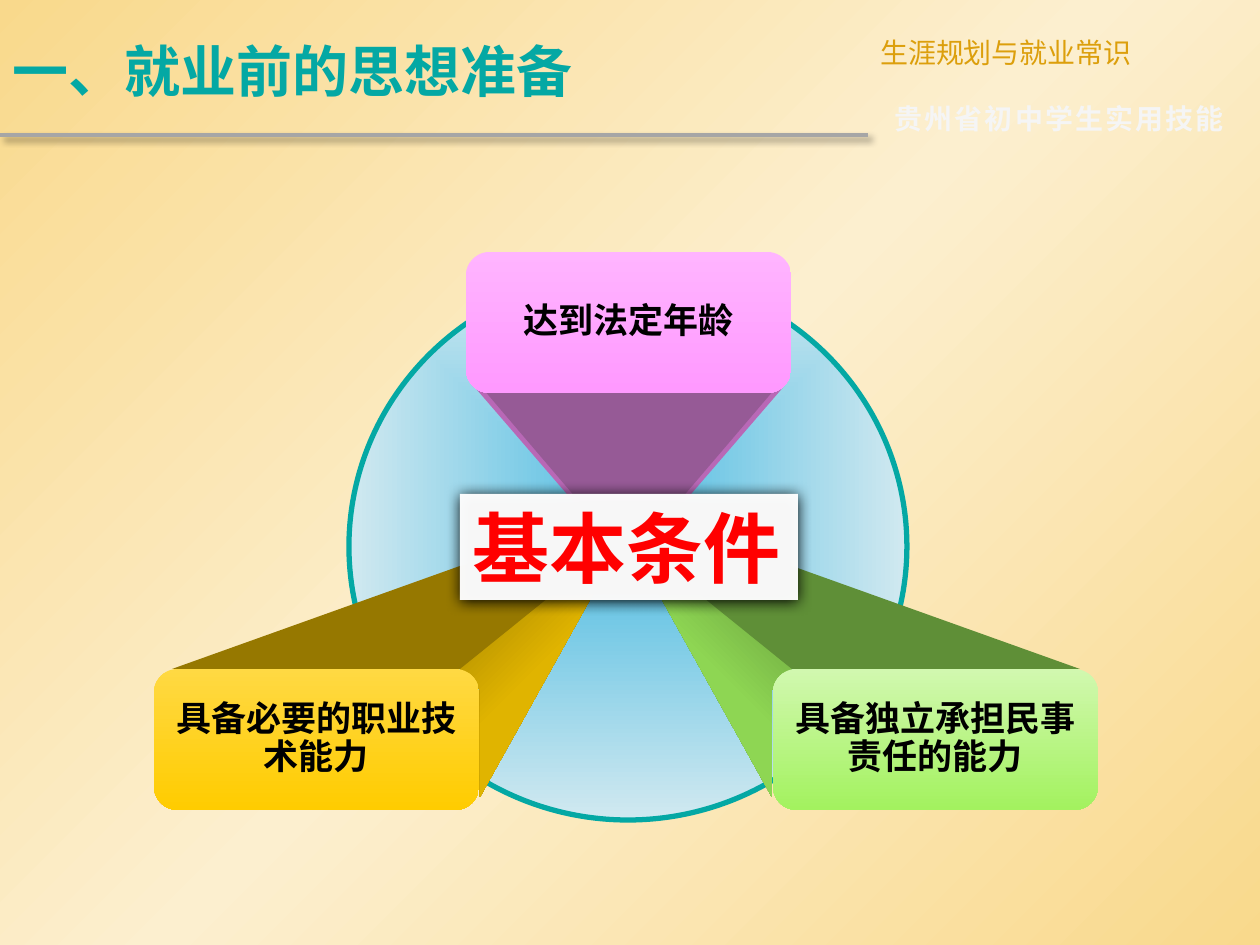
from lxml import etree
from pptx import Presentation
from pptx.dml.color import RGBColor
from pptx.enum.shapes import MSO_CONNECTOR, MSO_SHAPE
from pptx.enum.text import MSO_ANCHOR, MSO_AUTO_SIZE, PP_ALIGN
from pptx.oxml.ns import qn
from pptx.util import Pt

PX = 914400 // 126
FONT = "Noto Sans CJK SC"
TEAL = RGBColor(0x04, 0xA8, 0xA4)
AMBER = RGBColor(0xDC, 0x9F, 0x0C)
GREY = RGBColor(0xA6, 0xA6, 0xA6)
PALE = RGBColor(0xF5, 0xF5, 0xF5)
WHITE = RGBColor(0xFF, 0xFF, 0xFF)
BLACK = RGBColor(0, 0, 0)
RED = RGBColor(0xFF, 0, 0)
SAND = RGBColor(0xF9, 0xD9, 0x8C)
CREAM = RGBColor(0xFC, 0xEF, 0xCF)
SKY = RGBColor(0x52, 0xBD, 0xE2)
ICE = RGBColor(0xD1, 0xE9, 0xF0)
PINK = RGBColor(0xFF, 0xB4, 0xFF), RGBColor(0xFF, 0x99, 0xFF)
GOLD = RGBColor(0xFF, 0xD9, 0x43), RGBColor(0xFF, 0xCC, 0x00)
GREEN = RGBColor(0xD1, 0xF8, 0xAF), RGBColor(0xA3, 0xF2, 0x5F)
PLUM = RGBColor(0x96, 0x5A, 0x96)
ORCHID = RGBColor(0xB8, 0x68, 0xB6)
GOLD_SIDE = RGBColor(0x96, 0x78, 0x00), RGBColor(0xE0, 0xB4, 0x00)
GREEN_SIDE = RGBColor(0x5F, 0x8F, 0x37), RGBColor(0x8E, 0xD6, 0x53)

HEADINGS = [
    ("生涯规划与就业常识", (868, 29, 392, 47), 16, AMBER, False, PP_ALIGN.JUSTIFY, 0),
    ("一、就业前的思想准备", (0, 6, 868, 129), 32, TEAL, True, PP_ALIGN.LEFT, 0),
    ("贵州省初中学生实用技能", (882, 95, 372, 47), 16, PALE, True, PP_ALIGN.LEFT, 130),
]
CONDITIONS = [
    ("具备独立承担民事责任的能力", 773, 669, GREEN),
    ("具备必要的职业技术能力", 154, 669, GOLD),
    ("达到法定年龄", 466, 252, PINK),
]
BOX_W, BOX_H = 325, 141
AXIS = 626
TOP_FACE = [(172, 669), (460, 566), (626, 535), (460, 669)]
SIDE_FACE = [(460, 669), (626, 535), (480, 797), (480, 690)]
PINK_EDGE = [(472, 384), (786, 384), (629, 566)]
PINK_FACE = [(484, 390), (774, 390), (629, 560)]


def px(values):
    return [round(v * PX) for v in values]


def gradient(fill, root, stops, angle=None):
    fill.gradient()
    grad = root.find(".//" + qn("a:gradFill"))
    for child in list(grad):
        grad.remove(child)
    lst = etree.SubElement(grad, qn("a:gsLst"))
    for i, color in enumerate(stops):
        gs = etree.SubElement(lst, qn("a:gs"), pos=str(i * 100000 // (len(stops) - 1)))
        etree.SubElement(gs, qn("a:srgbClr"), val=str(color))
    if angle is None:
        way = etree.SubElement(grad, qn("a:path"), path="shape")
        etree.SubElement(way, qn("a:fillToRect"), l="50000", t="50000", r="50000", b="50000")
    else:
        etree.SubElement(grad, qn("a:lin"), ang=str(angle * 60000), scaled="0")


def add_shadow(sp, alpha, blur, dist, angle):
    effects = etree.SubElement(sp._element.spPr, qn("a:effectLst"))
    outer = etree.SubElement(effects, qn("a:outerShdw"), blurRad=str(Pt(blur)),
                             dist=str(Pt(dist)), dir=str(angle * 60000),
                             algn="ctr", rotWithShape="0")
    color = etree.SubElement(outer, qn("a:srgbClr"), val=str(BLACK))
    etree.SubElement(color, qn("a:alpha"), val=str(alpha * 1000))


def set_text(sp, text, size, color, bold, align, spacing=0):
    tf = sp.text_frame
    tf.text = text
    tf.word_wrap = True
    tf.vertical_anchor = MSO_ANCHOR.MIDDLE
    p = tf.paragraphs[0]
    p.alignment = align
    f = p.runs[0].font
    f.name, f.size, f.bold, f.color.rgb = FONT, Pt(size), bold, color
    rPr = p.runs[0]._r.get_or_add_rPr()
    etree.SubElement(rPr, qn("a:ea"), typeface=FONT)
    if spacing:
        rPr.set("spc", str(spacing))
    return tf


def add_face(s, points, colors, angle=0):
    pts = [px(pt) for pt in points]
    builder = s.shapes.build_freeform(*pts[0], scale=1.0)
    builder.add_line_segments(pts[1:], close=True)
    sp = builder.convert_to_shape()
    sp.shadow.inherit = False
    sp.line.fill.background()
    gradient(sp.fill, sp._element, colors, angle)


def mirror(points):
    return [(2 * AXIS - x, y) for x, y in points]


def add_condition(s, text, x, y, colors):
    sp = s.shapes.add_shape(MSO_SHAPE.ROUNDED_RECTANGLE, *px((x, y, BOX_W, BOX_H)))
    sp.adjustments[0] = 0.167
    sp.shadow.inherit = False
    sp.line.fill.background()
    gradient(sp.fill, sp._element, colors, 90)
    tf = set_text(sp, text, 20, BLACK, True, PP_ALIGN.CENTER)
    tf.margin_left = tf.margin_right = 15 * PX
    tf.margin_top = tf.margin_bottom = 8 * PX
    tf.paragraphs[0].line_spacing = 0.9


def main():
    """Build the slide on the basic conditions for employment."""
    prs = Presentation()
    prs.slide_width, prs.slide_height = px((1260, 945))
    s = prs.slides.add_slide(prs.slide_layouts[6])
    gradient(s.background.fill, s._element, (SAND, CREAM, SAND), 45)

    rule = s.shapes.add_connector(MSO_CONNECTOR.STRAIGHT, *px((0, 135, 868, 135)))
    rule.line.color.rgb, rule.line.width = GREY, Pt(2.25)
    add_shadow(rule, 40, 4, 3, 45)
    for text, at, *style in HEADINGS:
        set_text(s.shapes.add_textbox(*px(at)), text, *style)

    disc = s.shapes.add_shape(MSO_SHAPE.OVAL, *px((349, 273, 558, 547)))
    disc.shadow.inherit = False
    disc.line.color.rgb, disc.line.width = TEAL, Pt(3)
    gradient(disc.fill, disc._element, (SKY, ICE))

    for place, (dark, light), angle in ((list, GOLD_SIDE, 45), (mirror, GREEN_SIDE, 135)):
        add_face(s, place(SIDE_FACE), (dark, light, light), angle)
        add_face(s, place(TOP_FACE), (dark, dark))
    add_face(s, PINK_EDGE, (ORCHID, ORCHID))
    add_face(s, PINK_FACE, (PLUM, PLUM))
    for condition in CONDITIONS:
        add_condition(s, *condition)

    hub = s.shapes.add_shape(MSO_SHAPE.RECTANGLE, *px((460, 494, 338, 106)))
    hub.fill.solid()
    hub.fill.fore_color.rgb = WHITE
    color = hub._element.spPr.find(qn("a:solidFill"))[0]
    etree.SubElement(color, qn("a:alpha"), val="97000")
    hub.line.fill.background()
    add_shadow(hub, 100, 8.5, 1, 90)
    tf = set_text(hub, "基本条件", 44, RED, True, PP_ALIGN.LEFT)
    tf.word_wrap = False
    tf.auto_size = MSO_AUTO_SIZE.SHAPE_TO_FIT_TEXT
    prs.save("out.pptx")


if __name__ == "__main__":
    main()
